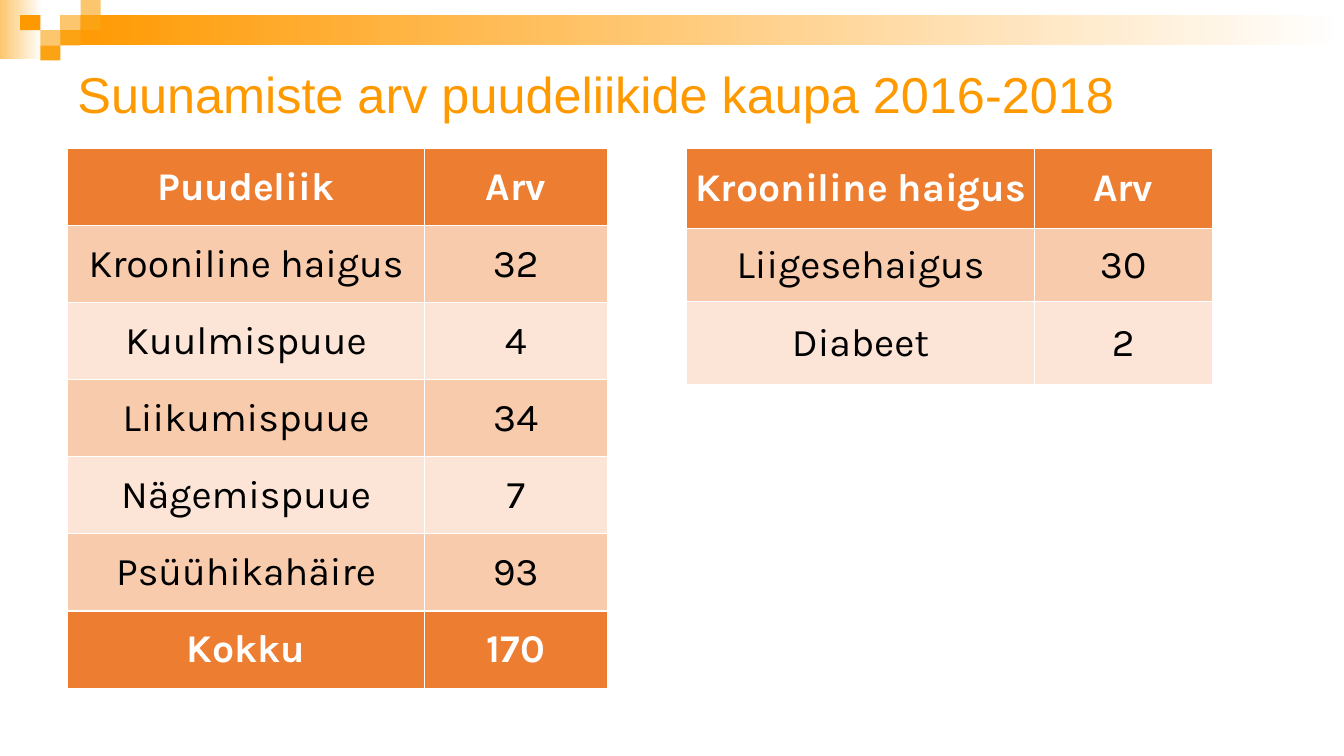
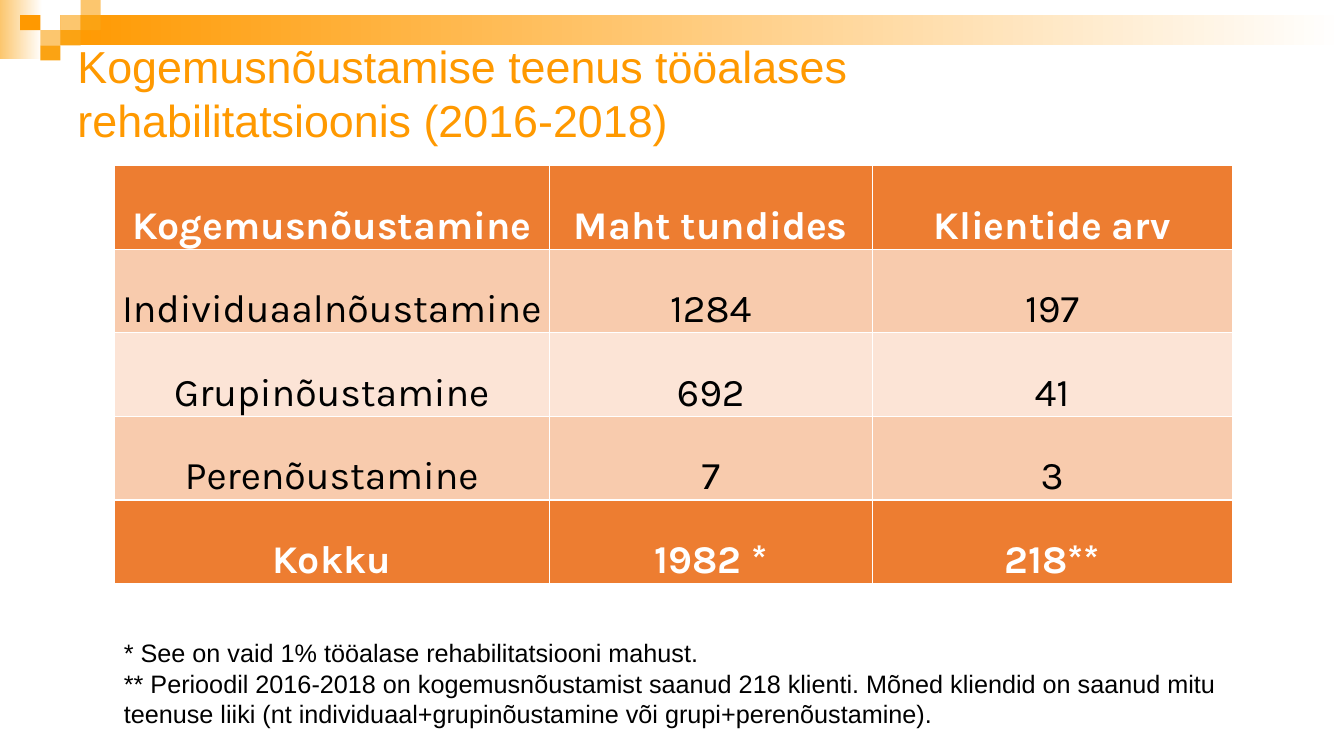
import dataclasses

import pptx
import pptx.dml.color
import pptx.enum.shapes
import pptx.enum.text
import pptx.oxml
import pptx.oxml.ns
import pptx.util

MIDDLE = pptx.enum.text.MSO_ANCHOR.MIDDLE
BOTTOM = pptx.enum.text.MSO_ANCHOR.BOTTOM
TOP = pptx.enum.text.MSO_ANCHOR.TOP


@dataclasses.dataclass(frozen=True)
class Theme:
    width: float = 13.33
    height: float = 7.5
    col: float = 0.2
    row: float = 0.15
    strong: str = "FF9900"
    mid: str = "FBA313"
    soft: str = "FCC66E"
    white: str = "FFFFFF"
    ink: str = "000000"
    head: str = "ED7D31"
    bands: tuple = ("F8CBAD", "FCE4D6")
    font: str = "Arial"
    grid_font: str = "Karla"
    title: int = 36
    long_title: int = 32
    cell: int = 28
    note: int = 18
    thin: float = 0.5
    thick: float = 1.5


def rgb(tone):
    return pptx.dml.color.RGBColor.from_string(tone)


class Deck:
    """Style and current slide; lengths are columns and rows of the grid."""

    def __init__(self, theme):
        self.theme = theme
        self.file = pptx.Presentation()
        self.file.slide_width = pptx.util.Inches(theme.width)
        self.file.slide_height = pptx.util.Inches(theme.height)
        self.slide = None

    def across(self, cols):
        return pptx.util.Inches(cols * self.theme.col)

    def down(self, rows):
        return pptx.util.Inches(rows * self.theme.row)

    def place(self, left, top, wide, high):
        return (self.across(left), self.down(top),
                self.across(wide), self.down(high))

    def start(self, title, size, wide):
        self.slide = self.file.slides.add_slide(self.file.slide_layouts[6])
        self.banner()
        self.text([title], (3.35, 3.25, wide, 5.8), size,
                  self.theme.strong, MIDDLE)

    def banner(self):
        look = self.theme
        full = look.width / look.col
        self.block((0, 0, 2.1, 3.9), look.soft, look.white)
        self.block((3, 1, full - 3, 2), look.strong, look.white)
        tiles = ((3, 1, look.soft), (4, 0, look.soft), (4, 1, look.mid),
                 (2, 2, look.soft), (1, 1, look.strong),
                 (3, 2, look.mid), (2, 3, look.mid))
        for left, top, tone in tiles:
            self.block((left, top, 1, 1), tone)

    def block(self, box, tone, fade=None):
        """Draw a plain rectangle, or one that fades to a second colour."""
        shape = self.slide.shapes.add_shape(
            pptx.enum.shapes.MSO_SHAPE.RECTANGLE, *self.place(*box))
        shape.shadow.inherit = False
        shape.line.fill.background()
        if fade:
            shape.fill.gradient()
            shape.fill.gradient_angle = 0
            for stop, shade in zip(shape.fill.gradient_stops, (tone, fade)):
                stop.color.rgb = rgb(shade)
        else:
            shape.fill.solid()
            shape.fill.fore_color.rgb = rgb(tone)

    def text(self, lines, box, size, tone, anchor=TOP):
        frame = self.slide.shapes.add_textbox(*self.place(*box)).text_frame
        frame.word_wrap = True
        frame.vertical_anchor = anchor
        frame.text = "\n".join(lines)
        for para in frame.paragraphs:
            self.style(para.font, self.theme.font, size, tone)

    def style(self, font, name, size, tone, bold=False):
        font.name = name
        font.size = pptx.util.Pt(size)
        font.bold = bold
        font.color.rgb = rgb(tone)

    def table(self, data, left, top, cols, rows, anchor=MIDDLE, total=True):
        """Fill a table with a head row, banded rows and maybe a total row."""
        look = self.theme
        box = self.place(left, top, sum(cols), sum(rows))
        grid = self.slide.shapes.add_table(len(rows), len(cols), *box).table
        grid.first_row = grid.horz_banding = False
        for column, wide in zip(grid.columns, cols):
            column.width = self.across(wide)
        last = len(rows) - 1 if total else len(rows)
        for y, (high, words) in enumerate(zip(rows, data)):
            grid.rows[y].height = self.down(high)
            main = y in (0, last)
            fill = look.head if main else look.bands[(y - 1) % 2]
            above = look.thick if y == last else look.thin
            below = look.thick if y == last - 1 else look.thin
            for x, word in enumerate(words):
                cell = grid.cell(y, x)
                self.edge(cell, above, below)
                cell.fill.solid()
                cell.fill.fore_color.rgb = rgb(fill)
                cell.vertical_anchor = anchor
                cell.margin_left = cell.margin_right = pptx.util.Inches(0.01)
                cell.margin_top = pptx.util.Inches(0.01)
                cell.margin_bottom = 0
                cell.text_frame.text = word
                para = cell.text_frame.paragraphs[0]
                para.alignment = pptx.enum.text.PP_ALIGN.CENTER
                self.style(para.runs[0].font, look.grid_font, look.cell,
                           look.white if main else look.ink, main)

    def edge(self, cell, above, below):
        """Add the cell borders, which must come before its fill."""
        thin = self.theme.thin
        space = pptx.oxml.ns.nsdecls("a")
        props = cell._tc.get_or_add_tcPr()
        for side, size in zip("LRTB", (thin, thin, above, below)):
            props.append(pptx.oxml.parse_xml(
                f'<a:ln{side} {space} w="{pptx.util.Pt(size)}"><a:solidFill>'
                f'<a:srgbClr val="{self.theme.white}"/>'
                f'</a:solidFill></a:ln{side}>'))


def main():
    theme = Theme()
    deck = Deck(theme)

    deck.start("Suunamiste arv puudeliikide kaupa 2016-2018", theme.title, 60)
    kinds = (("Puudeliik", "Arv"), ("Krooniline haigus", "32"),
             ("Kuulmispuue", "4"), ("Liikumispuue", "34"),
             ("Nägemispuue", "7"), ("Psüühikahäire", "93"),
             ("Kokku", "170"))
    deck.table(kinds, 3.35, 9.8, (17.7, 9.05), [5.1] * len(kinds))
    chronic = (("Krooniline haigus", "Arv"), ("Liigesehaigus", "30"),
               ("Diabeet", "2"))
    deck.table(chronic, 34.05, 9.8, (17.25, 8.8), (5.3, 4.85, 5.5),
               total=False)

    deck.start("Kogemusnõustamise teenus tööalases "
               "rehabilitatsioonis (2016-2018)", theme.long_title, 48.6)
    hours = (("Kogemusnõustamine", "Maht tundides", "Klientide arv"),
             ("Individuaalnõustamine", "1284", "197"),
             ("Grupinõustamine", "692", "41"),
             ("Perenõustamine", "7", "3"),
             ("Kokku", "1982 *", "218**"))
    deck.table(hours, 5.65, 10.95, (21.6, 16, 17.85), [5.53] * len(hours),
               BOTTOM)
    deck.text(("* See on vaid 1% tööalase rehabilitatsiooni mahust.",
               "** Perioodil 2016-2018 on kogemusnõustamist saanud 218 "
               "klienti. Mõned kliendid on saanud mitu teenuse liiki "
               "(nt individuaal+grupinõustamine või grupi+perenõustamine)."),
              (5.65, 41.85, 55.4, 6.75), theme.note, theme.ink)

    deck.file.save("out.pptx")


if __name__ == "__main__":
    main()
